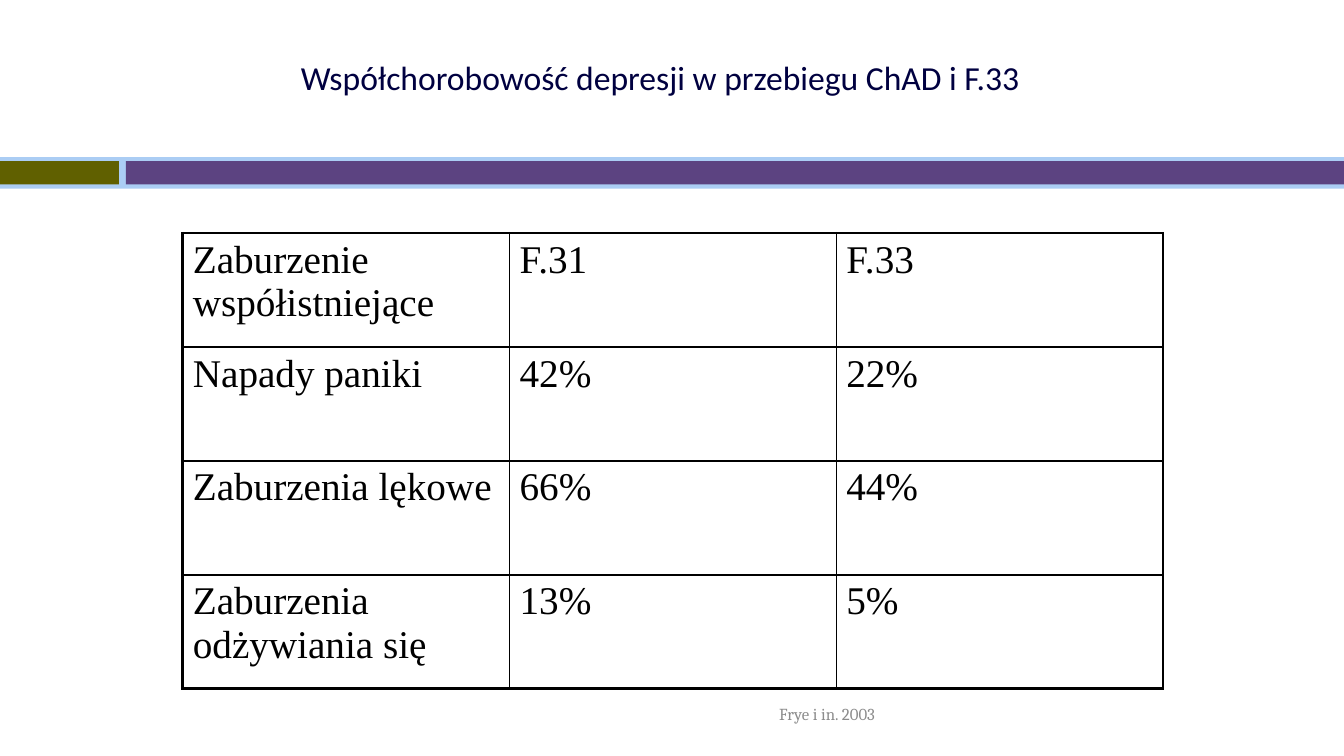
from lxml import etree
from pptx import Presentation
from pptx import util as u
from pptx.dml.color import RGBColor
from pptx.enum import shapes, text
from pptx.oxml import ns

ROWS = [
    ("Zaburzenie współistniejące", "F.31", "F.33"),
    ("Napady paniki", "42%", "22%"),
    ("Zaburzenia lękowe", "66%", "44%"),
    ("Zaburzenia odżywiania się", "13%", "5%"),
]
BANDS = [
    (0, 112.3, 960, 22.4, "ABCDF4"),
    (0, 115.2, 85, 16.6, "606000"),
    (90, 115.2, 870, 16.6, "5C4381"),
]
OUTER_WIDTH = 2.25
INNER_WIDTH = 1


def color(value):
    return RGBColor.from_string(value)


def add_run(paragraph, words, size, font, value):
    run = paragraph.add_run()
    run.text = words
    run.font.size = u.Pt(size)
    run.font.name = font
    run.font.color.rgb = color(value)


def add_band(slide, left, top, width, height, value):
    shape = slide.shapes.add_shape(
        shapes.MSO_SHAPE.RECTANGLE, u.Pt(left), u.Pt(top), u.Pt(width), u.Pt(height))
    shape.shadow.inherit = False
    shape.fill.solid()
    shape.fill.fore_color.rgb = color(value)
    shape.line.fill.background()


def format_title(slide, words):
    title = slide.shapes.title
    title.left, title.top = u.Pt(121.7), u.Pt(9.4)
    title.width, title.height = u.Pt(699.8), u.Pt(90.7)
    frame = title.text_frame
    frame.word_wrap = True
    frame.vertical_anchor = text.MSO_ANCHOR.MIDDLE
    paragraph = frame.paragraphs[0]
    paragraph.alignment = text.PP_ALIGN.CENTER
    add_run(paragraph, words, 24, "Calibri", "000040")


def add_border(cell, side, width):
    properties = cell._tc.get_or_add_tcPr()
    line = etree.SubElement(properties, ns.qn(f"a:ln{side}"), w=str(u.Pt(width)))
    fill = etree.SubElement(line, ns.qn("a:solidFill"))
    etree.SubElement(fill, ns.qn("a:srgbClr"), val="000000")


def add_table(slide, rows):
    row_count, column_count = len(rows), len(rows[0])
    frame = slide.shapes.add_table(
        row_count, column_count, u.Pt(130.6), u.Pt(166.5), u.Pt(700.2), u.Pt(325.6))
    table = frame.table
    table.first_row = False
    table.horz_banding = False
    for row_index, row in enumerate(rows):
        for column_index, words in enumerate(row):
            cell = table.cell(row_index, column_index)
            outer_sides = {
                "L": column_index == 0,
                "R": column_index == column_count - 1,
                "T": row_index == 0,
                "B": row_index == row_count - 1,
            }
            for side, is_outer in outer_sides.items():
                add_border(cell, side, OUTER_WIDTH if is_outer else INNER_WIDTH)
            cell.fill.background()
            add_run(cell.text_frame.paragraphs[0], words, 28, "Times New Roman", "000000")


def add_citation(slide, words):
    box = slide.shapes.add_textbox(u.Pt(328.3), u.Pt(491.8), u.Pt(303.8), u.Pt(36))
    frame = box.text_frame
    frame.word_wrap = True
    frame.vertical_anchor = text.MSO_ANCHOR.MIDDLE
    paragraph = frame.paragraphs[0]
    paragraph.alignment = text.PP_ALIGN.RIGHT
    add_run(paragraph, words, 12, "Cambria", "8C8C8C")


def main():
    presentation = Presentation()
    presentation.slide_width, presentation.slide_height = u.Pt(960), u.Pt(540)
    slide = presentation.slides.add_slide(presentation.slide_layouts[5])
    for band in BANDS:
        add_band(slide, *band)
    format_title(slide, "Współchorobowość depresji w przebiegu ChAD i F.33")
    add_table(slide, ROWS)
    add_citation(slide, "Frye i in. 2003")
    presentation.save("out.pptx")


if __name__ == "__main__":
    main()
